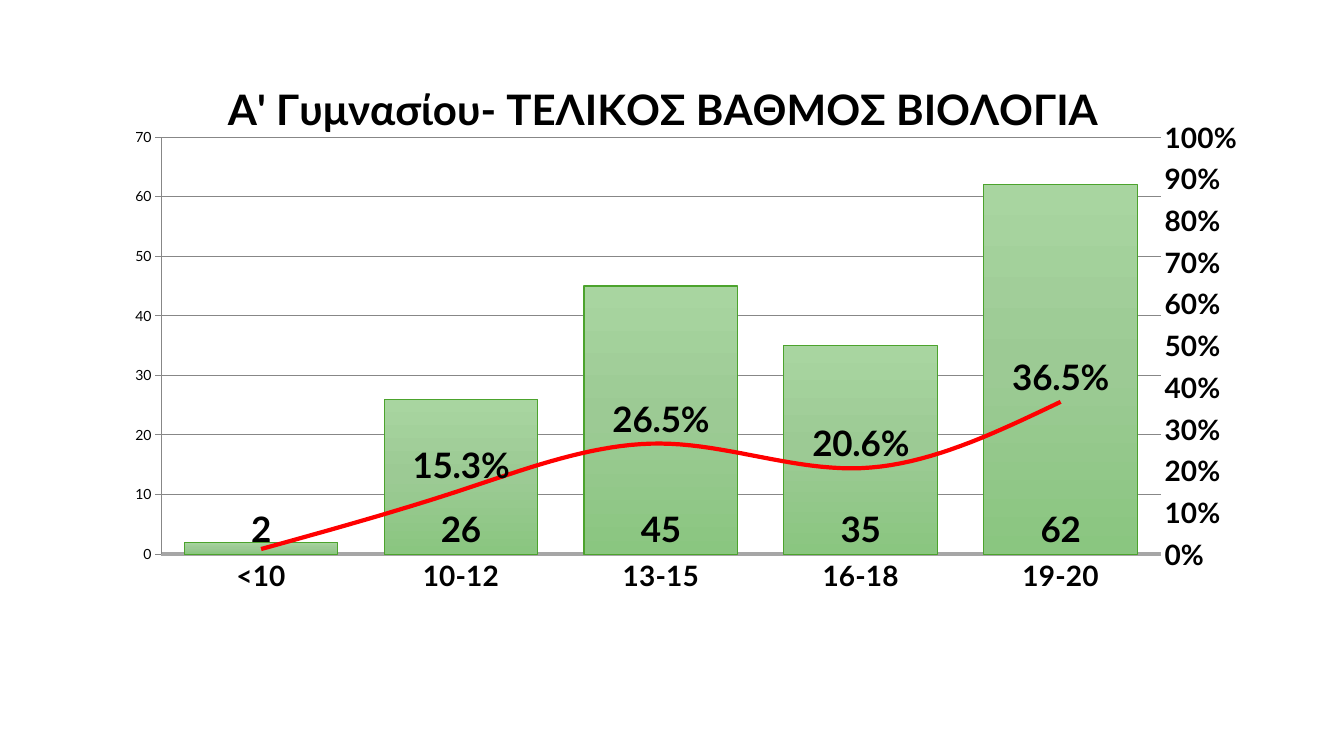
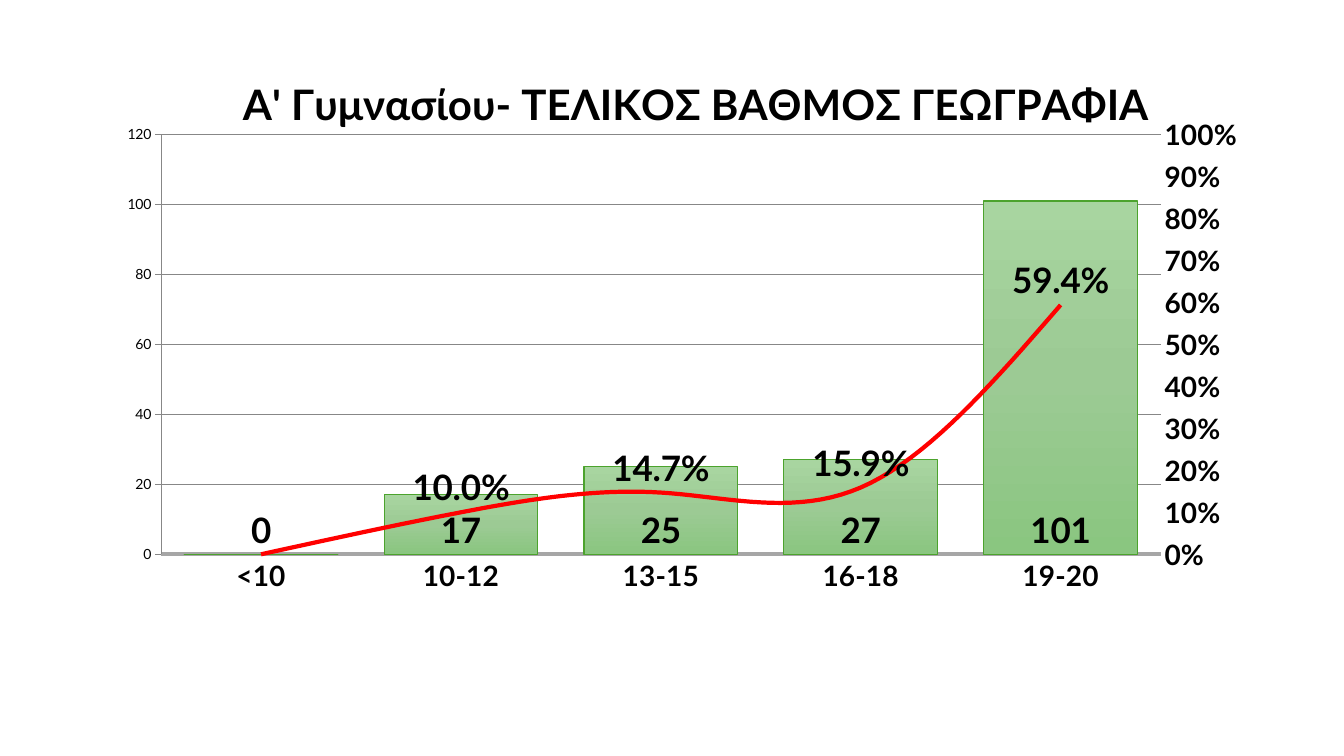
from pptx import Presentation
from pptx.chart import axis as ax
from pptx.chart import data as cd
from pptx.dml import color as dc
from pptx.enum import chart as ec
from pptx.oxml import parse_xml
from pptx.oxml import ns
from pptx.util import Inches, Pt

COLORS = {
    "text": "000000",
    "axis": "A6A6A6",
    "grid": "D9D9D9",
    "bar_top": "A8D5A0",
    "bar_middle": "9CCA94",
    "bar_bottom": "8AC680",
    "bar_edge": "4CA32D",
    "share": "FF0000",
}
FONT = "Lato"
GRADE_BANDS = ["<10", "10-12", "13-15", "16-18", "19-20"]
PLOT_BOX = {"x": 0.06, "y": 0.14, "w": 0.86, "h": 0.66}
PLOT_BOX_EXACT = {"x": 0.059, "y": 0.139, "w": 0.862, "h": 0.661}
SUBJECTS = [
    {
        "title": "Α' Γυμνασίου- ΤΕΛΙΚΟΣ ΒΑΘΜΟΣ ΒΙΟΛΟΓΙΑ",
        "title_at": {"x": 0.11, "y": 0.035},
        "box": (0.92, 0.49, 11.5, 6.26),
        "pupils": [2, 26, 45, 35, 62],
        "shares": [0.012, 0.153, 0.265, 0.206, 0.365],
    },
    {
        "title": "Α' Γυμνασίου- ΤΕΛΙΚΟΣ ΒΑΘΜΟΣ ΓΕΩΓΡΑΦΙΑ",
        "title_at": {"x": 0.123, "y": 0.032},
        "box": (0.92, 0.46, 11.5, 6.3),
        "pupils": [0, 17, 25, 27, 101],
        "shares": [0, 0.1, 0.147, 0.159, 0.594],
    },
]


def rgb(name):
    return dc.RGBColor.from_string(COLORS[name])


def xml(markup):
    head, rest = markup.split(">", 1)
    return parse_xml(f"{head} {ns.nsdecls('c', 'a')}>{rest}")


def style_font(font, size, bold=True):
    font.name = FONT
    font.size = Pt(size)
    font.bold = bold
    font.color.rgb = rgb("text")


def style_line(line, color, width):
    line.color.rgb = rgb(color)
    line.width = Pt(width)


def set_layout(parent, index, box, inner=False):
    for old in parent.findall(ns.qn("c:layout")):
        parent.remove(old)
    target = '<c:layoutTarget val="inner"/>' if inner else ""
    modes = "".join(f'<c:{k}Mode val="edge"/>' for k in "xy")
    sizes = "".join(f'<c:{k} val="{v}"/>' for k, v in box.items())
    parent.insert(index, xml(
        f"<c:layout><c:manualLayout>{target}{modes}{sizes}"
        "</c:manualLayout></c:layout>"))


def style_axis(axis, line_color=None):
    axis.major_tick_mark = axis.minor_tick_mark = ec.XL_TICK_MARK.NONE
    style_font(axis.tick_labels.font, 20)
    if line_color:
        style_line(axis.format.line, line_color, 3)
    else:
        axis.format.line.fill.background()


def set_scale(axis, top, step):
    axis.minimum_scale = 0
    axis.maximum_scale = top
    axis.major_unit = step


def label_values(series, position, number_format=None):
    labels = series.data_labels
    labels.show_value = True
    labels.position = position
    style_font(labels.font, 25)
    if number_format:
        labels.number_format = number_format
        labels.number_format_is_linked = False
    return labels


def move_shares_to_right_axis(chart):
    plot_area = chart._chartSpace.chart.plotArea
    bars = plot_area.find(ns.qn("c:barChart"))
    shares = bars.findall(ns.qn("c:ser"))[1]
    for flag in shares.findall(ns.qn("c:invertIfNegative")):
        shares.remove(flag)
    lines = xml(
        '<c:lineChart><c:grouping val="standard"/><c:varyColors val="0"/>'
        '<c:marker val="1"/><c:axId val="50010"/><c:axId val="50020"/>'
        "</c:lineChart>")
    lines.insert(2, shares)
    bars.addnext(lines)
    hidden_bands = xml(
        '<c:catAx><c:axId val="50010"/>'
        '<c:scaling><c:orientation val="minMax"/></c:scaling>'
        '<c:delete val="1"/><c:axPos val="b"/>'
        '<c:crossAx val="50020"/><c:crosses val="autoZero"/></c:catAx>')
    percent = xml(
        '<c:valAx><c:axId val="50020"/>'
        '<c:scaling><c:orientation val="minMax"/></c:scaling>'
        '<c:delete val="0"/><c:axPos val="r"/>'
        '<c:numFmt formatCode="0%" sourceLinked="0"/>'
        '<c:tickLblPos val="nextTo"/><c:crossAx val="50010"/>'
        '<c:crosses val="max"/><c:crossBetween val="between"/></c:valAx>')
    plot_area.findall(ns.qn("c:valAx"))[-1].addnext(hidden_bands)
    hidden_bands.addnext(percent)
    return ax.ValueAxis(percent)


def style_bars(plot):
    plot.gap_width = 30
    plot.vary_by_categories = False
    pupils = plot.series[0]
    style_line(pupils.format.line, "bar_edge", 0.75)
    stops = "".join(
        f'<a:gs pos="{i * 50000}"><a:srgbClr val="{COLORS[name]}"/></a:gs>'
        for i, name in enumerate(("bar_top", "bar_middle", "bar_bottom")))
    pupils._element.spPr.insert(0, xml(
        f"<a:gradFill><a:gsLst>{stops}</a:gsLst>"
        '<a:lin ang="5400000" scaled="0"/></a:gradFill>'))
    label_values(pupils, ec.XL_LABEL_POSITION.INSIDE_BASE)


def style_share_line(plot):
    shares = plot.series[0]
    shares.smooth = True
    shares.marker.style = ec.XL_MARKER_STYLE.NONE
    style_line(shares.format.line, "share", 3)
    labels = label_values(shares, ec.XL_LABEL_POSITION.ABOVE, "0.0%")
    labels._element.insert(0, xml(
        '<c:dLbl><c:idx val="0"/><c:delete val="1"/></c:dLbl>'))


def add_title(chart, title, position):
    heading = chart.chart_title
    run = heading.text_frame.paragraphs[0].add_run()
    run.text = title
    style_font(run.font, 30)
    heading.include_in_layout = False
    set_layout(heading._element, 1, position)


def add_grade_chart(slide, subject):
    data = cd.CategoryChartData()
    data.categories = GRADE_BANDS
    data.add_series("Series 1", subject["pupils"])
    data.add_series("Series 2", subject["shares"], "0.0%")
    box = [Inches(length) for length in subject["box"]]
    chart = slide.shapes.add_chart(
        ec.XL_CHART_TYPE.COLUMN_CLUSTERED, *box, data).chart
    chart.has_legend = False
    style_font(chart.font, 10, bold=False)
    add_title(chart, subject["title"], subject["title_at"])

    percent_axis = move_shares_to_right_axis(chart)
    style_bars(chart.plots[0])
    style_share_line(chart.plots[1])
    style_axis(chart.category_axis, "axis")
    style_axis(chart.value_axis, "axis")
    style_axis(percent_axis)
    set_scale(chart.value_axis, 170, 20)
    set_scale(percent_axis, 1, 0.1)
    style_line(chart.value_axis.major_gridlines.format.line, "grid", 0.75)
    set_layout(chart._chartSpace.chart.plotArea, 0, PLOT_BOX_EXACT, inner=True)


def main():
    deck = Presentation()
    deck.slide_width, deck.slide_height = Inches(13.33), Inches(7.5)
    for subject in SUBJECTS:
        add_grade_chart(deck.slides.add_slide(deck.slide_layouts[6]), subject)
    deck.save("out.pptx")


if __name__ == "__main__":
    main()
